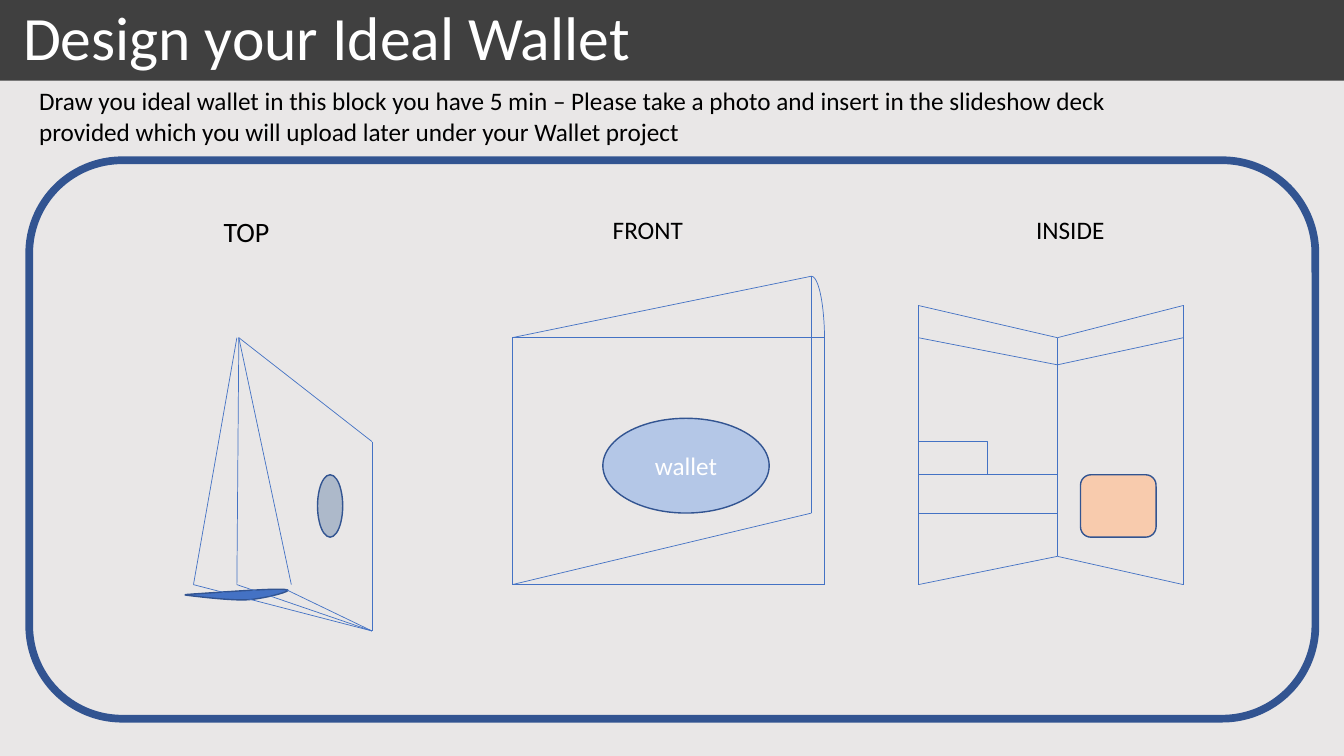
import dataclasses
import itertools

import pptx
import pptx.dml.color
import pptx.enum.shapes
import pptx.enum.text
import pptx.oxml
import pptx.oxml.ns
import pptx.util

Pt = pptx.util.Pt
SHAPE = pptx.enum.shapes.MSO_SHAPE
CONNECTOR = pptx.enum.shapes.MSO_CONNECTOR
ALIGN = pptx.enum.text.PP_ALIGN
ANCHOR = pptx.enum.text.MSO_ANCHOR
AUTO_SIZE = pptx.enum.text.MSO_AUTO_SIZE


@dataclasses.dataclass(frozen=True)
class Theme:
    """Colours, font, type sizes and line widths of the slide."""
    background: str = "E9E7E7"
    band: str = "404040"
    light: str = "FFFFFF"
    dark: str = "000000"
    outline: str = "325491"
    crease: str = "4472C4"
    badge: str = "B4C7E7"
    clasp: str = "ADB9CA"
    card: str = "F8CBAD"
    font: str = "Calibri"
    title_size: int = 44
    heading_size: int = 20
    body_size: int = 18
    frame_width: float = 5.5
    outline_width: float = 1
    crease_width: float = 0.5


THEME = Theme()


def rgb(colour):
    """Turn a hex string into a colour."""
    return pptx.dml.color.RGBColor.from_string(colour)


def write(paragraph, text, size, colour):
    """Add one formatted run to a paragraph."""
    run = paragraph.add_run()
    run.text = text
    run.font.name = THEME.font
    run.font.size = Pt(size)
    run.font.color.rgb = rgb(colour)


def paint(shape, fill=None, line=None, width=THEME.outline_width):
    """Set fill and outline of a shape, leaving out what is not given."""
    shape.shadow.inherit = False
    if fill:
        shape.fill.solid()
        shape.fill.fore_color.rgb = rgb(fill)
    else:
        shape.fill.background()
    if line:
        shape.line.color.rgb = rgb(line)
        shape.line.width = Pt(width)
    else:
        shape.line.fill.background()


def add_figure(slide, preset, box, **style):
    """Draw a preset shape in a left, top, width, height box."""
    figure = slide.shapes.add_shape(preset, *map(Pt, box))
    paint(figure, **style)
    return figure


def add_label(slide, box, text, size, wrap=False):
    """Place a text box that grows with its text."""
    frame = slide.shapes.add_textbox(*map(Pt, box)).text_frame
    frame.word_wrap = wrap
    frame.auto_size = AUTO_SIZE.SHAPE_TO_FIT_TEXT
    write(frame.paragraphs[0], text, size, THEME.dark)


def add_crease(slide, start, end, kind=CONNECTOR.STRAIGHT):
    """Draw one thin wallet edge."""
    crease = slide.shapes.add_connector(kind, *map(Pt, (*start, *end)))
    crease.line.color.rgb = rgb(THEME.crease)
    crease.line.width = Pt(THEME.crease_width)
    crease.element.spPr.append(pptx.oxml.parse_xml(
        f"<a:effectLst {pptx.oxml.ns.nsdecls('a')}/>"))


def add_creases(slide, *points):
    """Join consecutive points with wallet edges."""
    for start, end in itertools.pairwise(points):
        add_crease(slide, start, end)


def bezier(start, first, second, end, steps=16):
    """List points along a cubic curve, without its start."""
    curve = []
    for step in range(1, steps + 1):
        t = step / steps
        weights = ((1 - t) ** 3, 3 * t * (1 - t) ** 2, 3 * t * t * (1 - t), t ** 3)
        curve.append(tuple(sum(w * value for w, value in zip(weights, axis))
                           for axis in zip(start, first, second, end)))
    return curve


def add_curved_outline(slide, start, curves, **style):
    """Draw a closed outline made of cubic curves."""
    points, corner = [], start
    for curve in curves:
        points += bezier(corner, *curve)
        corner = curve[-1]
    builder = slide.shapes.build_freeform(*map(Pt, start))
    builder.add_line_segments([tuple(map(Pt, point)) for point in points], close=True)
    paint(builder.convert_to_shape(), **style)


def add_title(slide, text, box):
    """Set the title over a dark band."""
    title = slide.shapes.title
    title.left, title.top, title.width, title.height = map(Pt, box)
    band = add_figure(slide, SHAPE.RECTANGLE, box, fill=THEME.band)
    title.element.addprevious(band.element)
    frame = title.text_frame
    frame.auto_size = AUTO_SIZE.NONE
    frame.vertical_anchor = ANCHOR.MIDDLE
    frame.margin_left = Pt(16.5)
    paragraph = frame.paragraphs[0]
    paragraph.alignment = ALIGN.LEFT
    paragraph.line_spacing = 0.9
    write(paragraph, text, THEME.title_size, THEME.light)


def draw_front(slide):
    """Draw the front view with its named badge."""
    left, right, flap = 365.8, 589, 579.6
    top, bottom, flap_top, flap_bottom = 241.2, 417.6, 197.3, 366.5
    add_creases(slide, (right, top), (left, top), (left, bottom),
                (right, bottom), (right, top))
    add_creases(slide, (left, top), (flap, flap_top), (flap, flap_bottom), (left, bottom))
    add_figure(slide, SHAPE.ARC, (570.2, flap_top, 18.8, 92.2),
               line=THEME.crease, width=THEME.crease_width)
    badge = add_figure(slide, SHAPE.OVAL, (430.6, 298.8, 118.8, 67.7),
                       fill=THEME.badge, line=THEME.outline)
    badge.text_frame.vertical_anchor = ANCHOR.MIDDLE
    paragraph = badge.text_frame.paragraphs[0]
    paragraph.alignment = ALIGN.CENTER
    write(paragraph, "wallet", THEME.body_size, THEME.light)


def draw_top(slide):
    """Draw the wallet standing open, seen from the top."""
    peak, back_peak = (170.6, 241.2), (169.2, 241.2)
    middle, left, right = (169.2, 417.6), (138.2, 417.6), (208.1, 417.6)
    cover_top, cover_bottom = (265.7, 315.4), (265.7, 450.7)
    add_creases(slide, peak, middle)
    add_creases(slide, back_peak, left)
    add_creases(slide, peak, right)
    add_curved_outline(slide, (141.1, 424.1), [
        ((152.6, 423.4), (198.7, 419.8), (204.5, 421.2)),
        ((211, 421.9), (188.6, 427.7), (177.1, 428.4)),
        ((165.6, 429.1), (141.8, 426.2), (136.1, 425.5)),
        ((130.3, 424.8), (130.3, 424.8), (141.1, 424.1)),
    ], fill=THEME.crease, line=THEME.outline)
    add_creases(slide, peak, cover_top, cover_bottom)
    for foot in ((204.5, 421.2), middle, left):
        add_creases(slide, foot, cover_bottom)
    add_figure(slide, SHAPE.OVAL, (226.8, 339.1, 18, 44.6),
               fill=THEME.clasp, line=THEME.outline)


def draw_inside(slide):
    """Draw the open wallet with its pockets and card."""
    left, fold, right = 655.9, 755.3, 845.3
    top, bottom, fold_top, fold_bottom = 218.2, 417.6, 241.2, 397.4
    pocket_top, pocket_bottom = 339.1, 366.5
    add_creases(slide, (fold, fold_top), (left, top), (left, bottom), (fold, fold_bottom),
                (right, bottom), (right, top), (fold, fold_top), (fold, fold_bottom))
    for edge in (pocket_top, pocket_bottom):
        add_creases(slide, (left, edge), (fold, edge))
    add_crease(slide, (left, 315.4), (fold, pocket_top), CONNECTOR.ELBOW)
    add_figure(slide, SHAPE.ROUNDED_RECTANGLE, (771.8, pocket_top, 54, 44.6),
               fill=THEME.card, line=THEME.outline)
    add_creases(slide, (left, fold_top), (fold, 260.6), (right, fold_top))


def main():
    """Build and save the wallet slide."""
    deck = pptx.Presentation()
    deck.slide_width, deck.slide_height = Pt(960), Pt(540)
    slide = deck.slides.add_slide(deck.slide_layouts[5])
    slide.background.fill.solid()
    slide.background.fill.fore_color.rgb = rgb(THEME.background)
    add_title(slide, "Design your Ideal Wallet", (0, 0, 960, 57.6))
    add_figure(slide, SHAPE.ROUNDED_RECTANGLE, (20.9, 114.5, 918.7, 398.9),
               line=THEME.outline, width=THEME.frame_width)
    add_label(slide, (20.9, 57.6, 844.6, 51.1),
              "Draw you ideal wallet in this block you have 5 min – Please take a photo "
              "and insert in the slideshow deck provided which you will upload later "
              "under your Wallet project", THEME.body_size, wrap=True)
    draw_front(slide)
    draw_top(slide)
    draw_inside(slide)
    add_label(slide, (152.6, 149.8, 47.5, 31.7), "TOP", THEME.heading_size)
    add_label(slide, (430.6, 149.8, 64.8, 28.8), "FRONT", THEME.body_size)
    add_label(slide, (733, 149.8, 64.1, 28.8), "INSIDE", THEME.body_size)
    deck.save("out.pptx")


if __name__ == "__main__":
    main()
